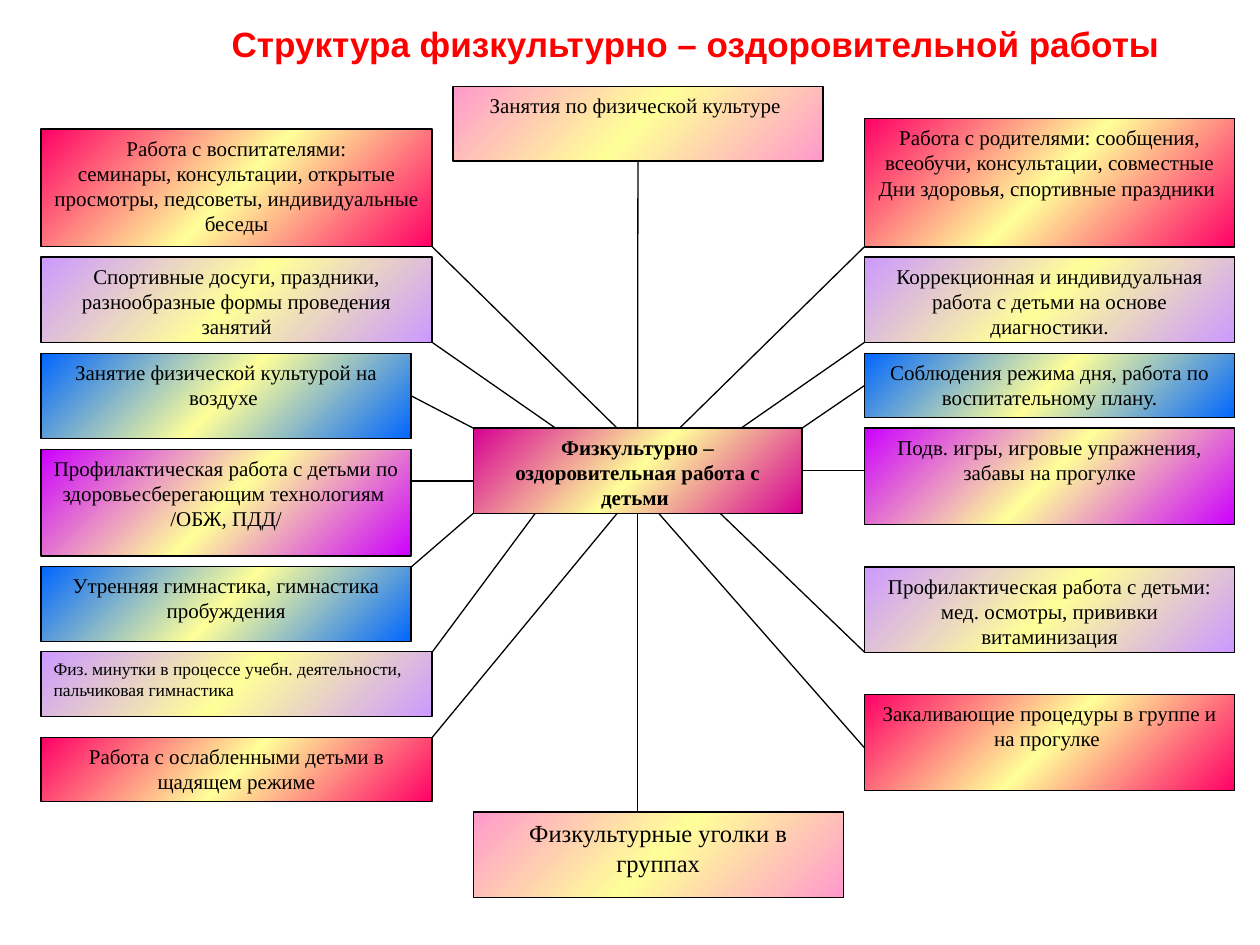
from pptx import Presentation
from pptx.util import Cm, Pt
from pptx.dml.color import RGBColor
from pptx.enum import shapes as sh, text as tx
from pptx.oxml.ns import qn
from lxml import etree

BLACK = RGBColor(0, 0, 0)
RED = RGBColor(0xFF, 0, 0)
CREAM = RGBColor(0xFF, 0xFF, 0x99)
PINK = RGBColor(0xFF, 0x99, 0xCC)
ROSE = RGBColor(0xFF, 0, 0x66)
LILAC = RGBColor(0xCC, 0x99, 0xFF)
BLUE = RGBColor(0, 0x66, 0xFF)
VIOLET = RGBColor(0xCC, 0, 0xFF)
PLUM = RGBColor(0xD6, 0, 0x93)

LEFT, RIGHT = 0.83, 17.43
WIDE, SLIM = 7.88, 7.46
INNER, OUTER = LEFT + SLIM, LEFT + WIDE
HUB = (9.54, 8.63, 6.63, 1.72)
TOP, BASE = HUB[1], HUB[1] + HUB[3]
WEST, EAST = HUB[0], HUB[0] + HUB[2]
MID = HUB[0] + HUB[2] / 2

deck = Presentation()
deck.slide_width, deck.slide_height = Cm(25.4), Cm(19.05)
slide = deck.slides.add_slide(deck.slide_layouts[6])


def add_run(para, words, size, face, color=BLACK, bold=False):
    run = para.add_run()
    run.text = words
    run.font.size = Pt(size)
    run.font.name = face
    run.font.bold = bold
    run.font.color.rgb = color


def add_box(place, color, paras, size=12, bold=False):
    box = slide.shapes.add_shape(sh.MSO_SHAPE.RECTANGLE, *map(Cm, place))
    box.shadow.inherit = False
    box.fill.gradient()
    box.fill.gradient_angle = 315
    stops = box.fill.gradient_stops
    for stop in stops:
        stop.color.rgb = color
    stops[0].position, stops[1].position = 0, 1
    grads = box.fill._fill._gradFill.find(qn("a:gsLst"))
    half = etree.Element(qn("a:gs"), pos="50000")
    etree.SubElement(half, qn("a:srgbClr"), val=str(CREAM))
    grads.insert(1, half)
    box.line.color.rgb = BLACK
    box.line.width = Pt(0.75)
    frame = box.text_frame
    frame.word_wrap = True
    frame.vertical_anchor = tx.MSO_ANCHOR.TOP
    for i, words in enumerate(paras):
        para = frame.paragraphs[0] if i == 0 else frame.add_paragraph()
        para.alignment = tx.PP_ALIGN.LEFT if size == 10 else tx.PP_ALIGN.CENTER
        add_run(para, words, size, "Times New Roman", bold=bold)
    return box


title = slide.shapes.add_textbox(Cm(1.27), Cm(0.33), Cm(22.86), Cm(1.4))
title.text_frame.word_wrap = True
title.text_frame.margin_left = Cm(3.4)
add_run(title.text_frame.paragraphs[0],
        "Структура физкультурно – оздоровительной работы",
        20, "Arial", RED, True)

items = [
    ("lesson", (9.13, 1.74, SLIM, 1.51), PINK, ["Занятия по физической культуре "]),
    ("temper", (RIGHT, 14, SLIM, 1.94), ROSE,
     ["Закаливающие процедуры в группе и на прогулке "]),
    ("health", (RIGHT, 11.43, SLIM, 1.72), LILAC,
     ["Профилактическая работа с детьми: мед. осмотры, прививки витаминизация"]),
    ("parents", (RIGHT, 2.39, SLIM, 2.59), ROSE,
     ["Работа с родителями: сообщения, всеобучи, консультации, совместные "
      "Дни здоровья, спортивные праздники "]),
    ("support", (RIGHT, 5.18, SLIM, 1.72), LILAC,
     ["Коррекционная и индивидуальная работа с детьми на основе диагностики."]),
    ("regime", (RIGHT, 7.12, SLIM, 1.3), BLUE,
     ["Соблюдения режима дня, работа по воспитательному плану."]),
    ("games", (RIGHT, TOP, SLIM, 1.94), VIOLET,
     ["Подв. игры, игровые упражнения, забавы на прогулке"]),
    ("staff", (LEFT, 2.6, WIDE, 2.37), ROSE,
     ["Работа с воспитателями:",
      "семинары, консультации, открытые просмотры, педсоветы, индивидуальные беседы"]),
    ("leisure", (LEFT, 5.18, WIDE, 1.72), LILAC,
     ["Спортивные досуги, праздники, разнообразные формы проведения занятий"]),
    ("outdoor", (LEFT, 7.12, SLIM, 1.72), BLUE,
     ["Занятие физической культурой на воздухе "]),
    ("safety", (LEFT, 9.06, SLIM, 2.15), VIOLET,
     ["Профилактическая работа с детьми по здоровьесберегающим технологиям ",
      "/ОБЖ, ПДД/"]),
    ("morning", (LEFT, 11.42, SLIM, 1.51), BLUE,
     ["Утренняя гимнастика, гимнастика пробуждения"]),
    ("pause", (LEFT, 13.14, WIDE, 1.3), LILAC,
     ["Физ. минутки в процессе учебн. деятельности, пальчиковая гимнастика"], 10),
    ("gentle", (LEFT, 14.87, WIDE, 1.29), ROSE,
     ["Работа с ослабленными детьми в щадящем режиме"]),
    ("corner", (WEST, 16.37, SLIM, 1.72), PINK,
     ["Физкультурные уголки в группах"], 14),
    ("hub", HUB, PLUM, ["Физкультурно – оздоровительная работа с детьми "], 12, True),
]
boxes = {name: add_box(*rest) for name, *rest in items}

lines = [
    ((MID, 3.25), (MID, TOP), ("lesson", 2), ("hub", 0)),
    ((MID, BASE), (MID, 16.37), ("hub", 2), None),
    ((OUTER, 14.87), (12.44, BASE), None, None),
    ((RIGHT, 15.08), (13.28, BASE), None, None),
    ((OUTER, 13.15), (10.79, BASE), None, None),
    ((RIGHT, 13.15), (14.52, BASE), None, None),
    ((INNER, 11.43), (WEST, BASE), None, None),
    ((INNER, 9.7), (WEST, 9.7), None, None),
    ((RIGHT, 9.49), (EAST, 9.49), None, ("hub", 3)),
    ((WEST, TOP), (INNER, 7.98), None, ("outdoor", 3)),
    ((EAST, TOP), (RIGHT, 7.77), None, ("regime", 1)),
    ((OUTER, 4.97), (12.44, TOP), None, None),
    ((RIGHT, 4.97), (13.7, TOP), None, None),
    ((OUTER, 6.9), (11.2, TOP), None, None),
    ((RIGHT, 6.9), (14.94, TOP), None, None),
]
for start, end, head, tail in lines:
    line = slide.shapes.add_connector(sh.MSO_CONNECTOR.STRAIGHT, *map(Cm, start + end))
    line.line.color.rgb = BLACK
    line.line.width = Pt(0.75)
    etree.SubElement(line._element.spPr, qn("a:effectLst"))
    if head:
        line.begin_connect(boxes[head[0]], head[1])
    if tail:
        line.end_connect(boxes[tail[0]], tail[1])

deck.save("out.pptx")
